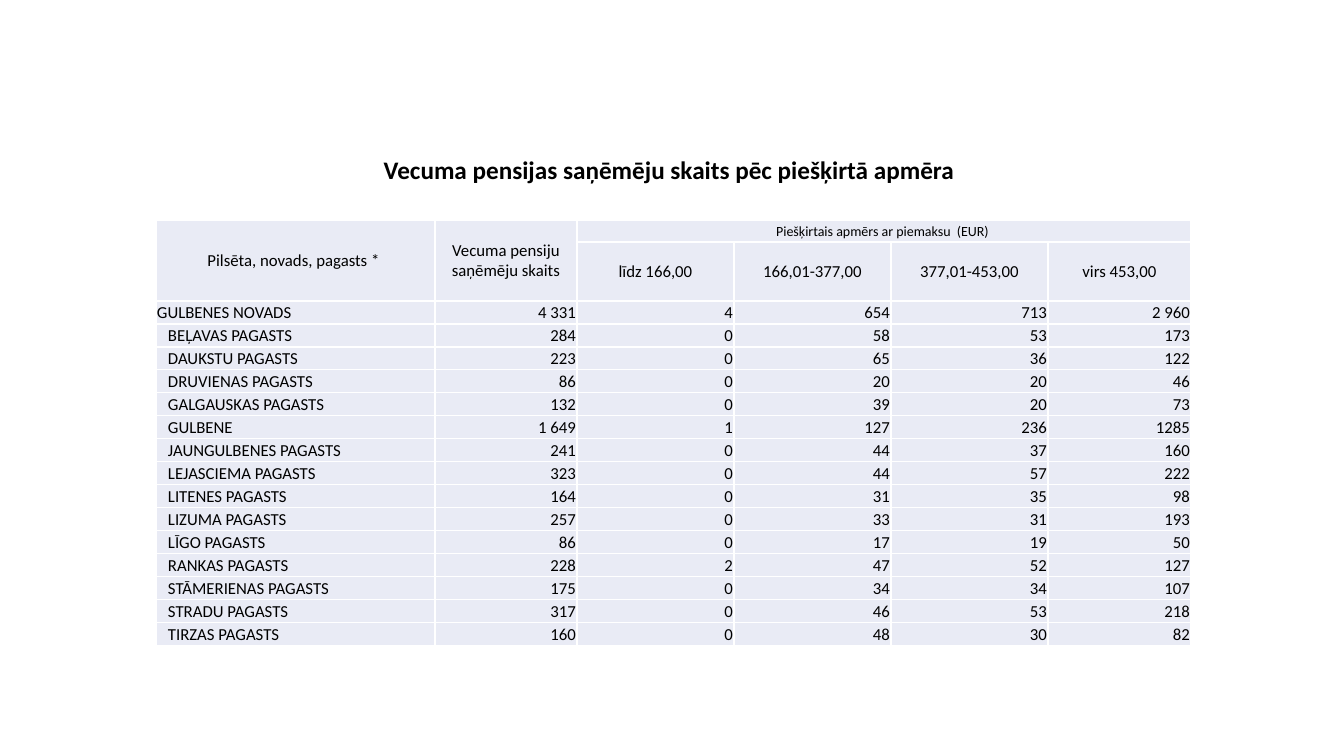
"""Build the slide with old-age pension recipients by pension amount in Gulbene."""
from lxml.etree import SubElement
from pptx import Presentation
from pptx.dml.color import RGBColor
from pptx.enum.text import MSO_ANCHOR, MSO_AUTO_SIZE, PP_ALIGN
from pptx.oxml.ns import qn
from pptx.util import Emu, Pt

BLACK = RGBColor(0x00, 0x00, 0x00)
WHITE = RGBColor(0xFF, 0xFF, 0xFF)
PALE_BLUE = RGBColor(0xE9, 0xEB, 0xF5)
FONT = "Calibri"
EMU_PER_INCH = 914400
PX_PER_INCH = 100.8

COLUMN_WIDTHS = [279, 142, 157, 157, 157, 143]
HEADER_HEIGHTS = [22, 59]
ROW_HEIGHT = 23
HEADERS = [
    ["Pilsēta, novads, pagasts * ", "Vecuma pensiju saņēmēju skaits",
     "Piešķirtais apmērs ar piemaksu  (EUR) ", "", "", ""],
    ["", "", "līdz 166,00", "166,01-377,00", "377,01-453,00", "virs 453,00"],
]
RECIPIENTS = [
    ["GULBENES NOVADS", "4 331", "4", "654", "713", "2 960"],
    ["BEĻAVAS PAGASTS", "284", "0", "58", "53", "173"],
    ["DAUKSTU PAGASTS", "223", "0", "65", "36", "122"],
    ["DRUVIENAS PAGASTS", "86", "0", "20", "20", "46"],
    ["GALGAUSKAS PAGASTS", "132", "0", "39", "20", "73"],
    ["GULBENE", "1 649", "1", "127", "236", "1285"],
    ["JAUNGULBENES PAGASTS", "241", "0", "44", "37", "160"],
    ["LEJASCIEMA PAGASTS", "323", "0", "44", "57", "222"],
    ["LITENES PAGASTS", "164", "0", "31", "35", "98"],
    ["LIZUMA PAGASTS", "257", "0", "33", "31", "193"],
    ["LĪGO PAGASTS", "86", "0", "17", "19", "50"],
    ["RANKAS PAGASTS", "228", "2", "47", "52", "127"],
    ["STĀMERIENAS PAGASTS", "175", "0", "34", "34", "107"],
    ["STRADU PAGASTS", "317", "0", "46", "53", "218"],
    ["TIRZAS PAGASTS", "160", "0", "48", "30", "82"],
]


def px(length):
    """Turn px into EMU."""
    return Emu(round(length * EMU_PER_INCH / PX_PER_INCH))


def add_span(para, text, size, bold=False):
    """Add one run of black text."""
    span = para.add_run()
    span.text = text
    span.font.name = FONT
    span.font.size = Pt(size)
    span.font.bold = bold
    span.font.color.rgb = BLACK


deck = Presentation()
deck.slide_width, deck.slide_height = px(1344), px(756)
page = deck.slides.add_slide(deck.slide_layouts[5])

title = page.shapes.title
title.left, title.top, title.width, title.height = px(168), px(124), px(1008), px(66)
title.text_frame.word_wrap = True
title.text_frame.auto_size = MSO_AUTO_SIZE.NONE
title.text_frame.vertical_anchor = MSO_ANCHOR.BOTTOM
title_para = title.text_frame.paragraphs[0]
title_para.alignment = PP_ALIGN.CENTER
title_para.line_spacing = 0.9
add_span(title_para, "Vecuma pensijas saņēmēju skaits pēc piešķirtā apmēra ", 18, True)

rows = HEADERS + RECIPIENTS
heights = HEADER_HEIGHTS + [ROW_HEIGHT] * len(RECIPIENTS)
table = page.shapes.add_table(
    len(rows), len(COLUMN_WIDTHS), px(156), px(220), px(sum(COLUMN_WIDTHS)), px(sum(heights))
).table
table.first_row = False
table.horz_banding = False
for column, width in zip(table.columns, COLUMN_WIDTHS):
    column.width = px(width)
for row, height in zip(table.rows, heights):
    row.height = px(height)

table.cell(0, 0).merge(table.cell(1, 0))
table.cell(0, 1).merge(table.cell(1, 1))
table.cell(0, 2).merge(table.cell(0, 5))

for row_index, values in enumerate(rows):
    is_header = row_index < len(HEADERS)
    is_parish = row_index > len(HEADERS)
    for column_index, value in enumerate(values):
        cell = table.cell(row_index, column_index)
        cell.margin_left = px(12 if is_parish and column_index == 0 else 1)
        cell.margin_right = cell.margin_top = px(1)
        cell.margin_bottom = 0
        cell.vertical_anchor = MSO_ANCHOR.MIDDLE

        properties = cell._tc.get_or_add_tcPr()
        for side in ("a:lnL", "a:lnR", "a:lnT", "a:lnB"):
            border = SubElement(properties, qn(side), w=str(Pt(1)))
            border_fill = SubElement(border, qn("a:solidFill"))
            SubElement(border_fill, qn("a:srgbClr"), val=str(WHITE))
        cell.fill.solid()
        cell.fill.fore_color.rgb = PALE_BLUE

        if value:
            para = cell.text_frame.paragraphs[0]
            if is_header:
                para.alignment = PP_ALIGN.CENTER
            else:
                para.alignment = PP_ALIGN.RIGHT if column_index else PP_ALIGN.LEFT
            add_span(para, value, 10 if (row_index, column_index) == (0, 2) else 12)

deck.save("out.pptx")
